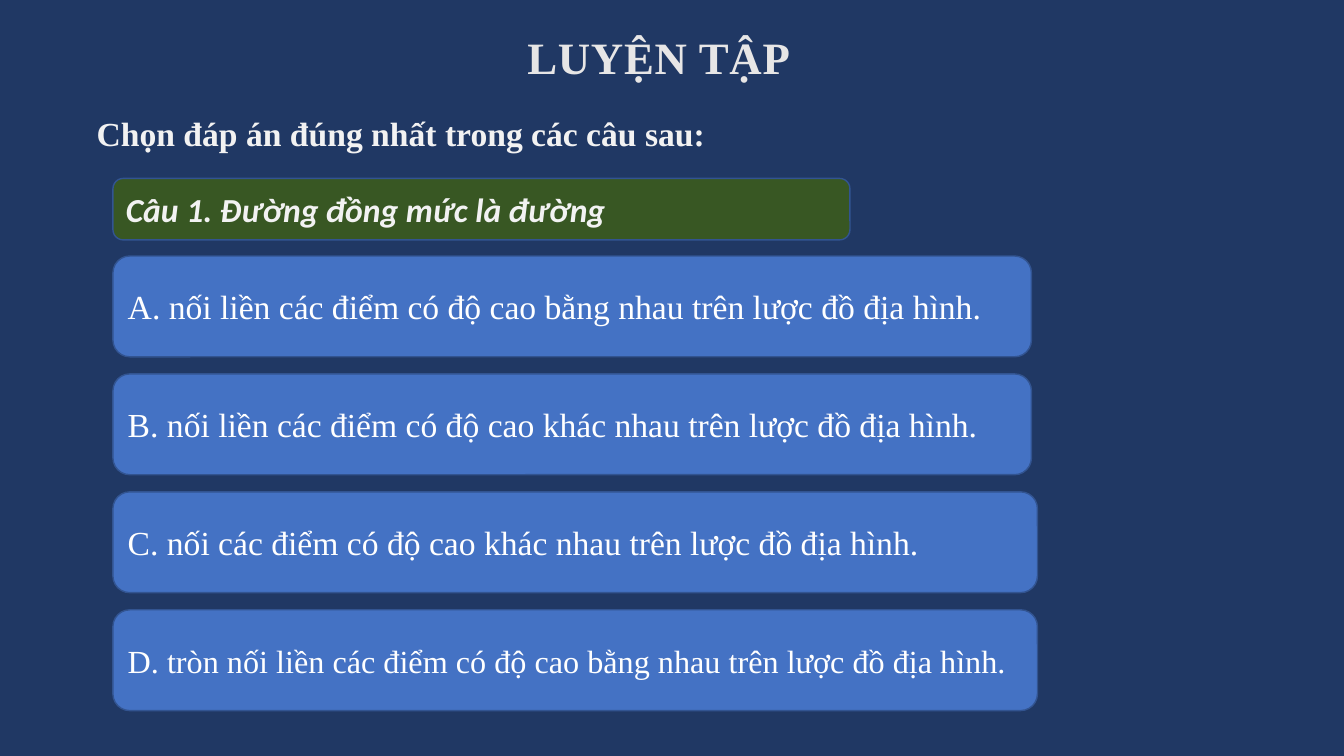
from pptx import Presentation
from pptx.dml.color import RGBColor
from pptx.enum import shapes, text
from pptx.util import Inches, Pt

# Content
TITLE = "LUYỆN TẬP"
INSTRUCTION = "Chọn đáp án đúng nhất trong các câu sau:"
QUESTION = "Câu 1. Đường đồng mức là đường"
ANSWERS = [  # wording, box width, font size
    ("A. nối liền các điểm có độ cao bằng nhau trên lược đồ địa hình.", 9.11, 24),
    ("B. nối liền các điểm có độ cao khác nhau trên lược đồ địa hình.", 9.11, 24),
    ("C. nối các điểm có độ cao khác nhau trên lược đồ địa hình.", 9.17, 24),
    ("D. tròn nối liền các điểm có độ cao bằng nhau trên lược đồ địa hình.", 9.17, 23),
]

# Colours and fonts
NAVY = RGBColor(0x20, 0x38, 0x64)
BLUE = RGBColor(0x44, 0x72, 0xC4)
OUTLINE = RGBColor(0x32, 0x54, 0x91)
GREEN = RGBColor(0x38, 0x57, 0x23)
WHITE = RGBColor(0xFF, 0xFF, 0xFF)
PALE = RGBColor(0xF2, 0xF2, 0xF2)
GREY = RGBColor(0xE7, 0xE6, 0xE6)
SERIF, SANS = "Times New Roman", "Calibri"

# Layout in inches
BOX_LEFT = 1.12
ANSWER_TOP, ANSWER_HEIGHT, ANSWER_PITCH = 2.54, 1, 1.17


def write(shape, wording, color, size=24, name=SERIF, bold=False,
          italic=False, anchor=text.MSO_ANCHOR.TOP):
    frame = shape.text_frame
    frame.text = wording
    frame.word_wrap = True
    frame.auto_size = text.MSO_AUTO_SIZE.NONE
    frame.vertical_anchor = anchor
    line = frame.paragraphs[0]
    line.alignment = text.PP_ALIGN.LEFT
    line.line_spacing = 1.0
    font = line.runs[0].font
    style = {"size": Pt(size), "name": name, "bold": bold, "italic": italic}
    for key, value in style.items():
        setattr(font, key, value)
    font.color.rgb = color
    return frame


def add_box(slide, top, width, height, fill, wording, color, **style):
    box = slide.shapes.add_shape(
        shapes.MSO_SHAPE.ROUNDED_RECTANGLE,
        *map(Inches, (BOX_LEFT, top, width, height)))
    box.shadow.inherit = False
    box.fill.solid()
    box.fill.fore_color.rgb = fill
    box.line.color.rgb = OUTLINE
    box.line.width = Pt(1)
    write(box, wording, color, anchor=text.MSO_ANCHOR.MIDDLE, **style)


def main():
    deck = Presentation()
    deck.slide_width, deck.slide_height = Inches(13.33), Inches(7.5)
    slide = deck.slides.add_slide(deck.slide_layouts[5])
    slide.background.fill.solid()
    slide.background.fill.fore_color.rgb = NAVY

    # Title, slightly letter-spaced
    title = slide.shapes.title
    title.left, title.top, title.width, title.height = map(
        Inches, (5.01, 0.24, 3.91, 0.64))
    heading = write(title, TITLE, GREY, size=32, bold=True)
    heading.margin_left = Inches(0.22)
    heading.paragraphs[0].runs[0].font._element.set("spc", "50")

    # Instruction
    instruction = slide.shapes.add_textbox(
        *map(Inches, (0.86, 1.07, 7.31, 0.5)))
    write(instruction, INSTRUCTION, PALE, bold=True)

    # Answers, evenly stacked
    for row, (answer, width, size) in enumerate(ANSWERS):
        add_box(slide, ANSWER_TOP + row * ANSWER_PITCH, width, ANSWER_HEIGHT,
                BLUE, answer, WHITE, size=size)

    # Question
    add_box(slide, 1.77, 7.31, 0.61, GREEN, QUESTION, PALE,
            name=SANS, bold=True, italic=True)

    deck.save("out.pptx")


if __name__ == "__main__":
    main()
